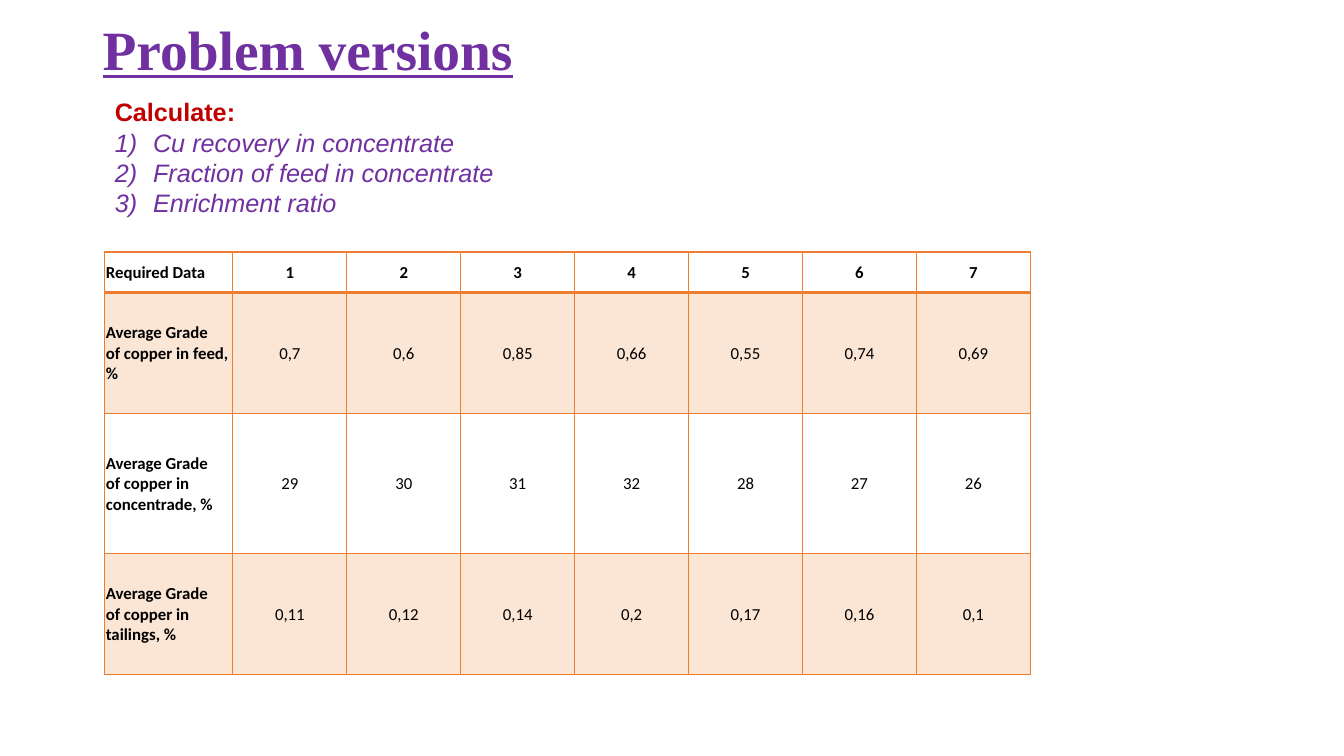
from dataclasses import dataclass
from typing import Any

from lxml.etree import SubElement
from pptx import Presentation
from pptx.dml.color import RGBColor
from pptx.enum.text import MSO_ANCHOR as Anchor, PP_ALIGN as Align
from pptx.oxml.ns import qn
from pptx.util import Inches, Pt

COLORS = {
    "purple": "7030A0",
    "red": "C00000",
    "orange": "ED7D31",
    "black": "000000",
    "white": "FFFFFF",
}


@dataclass(frozen=True)
class Style:
    font: str
    size: float
    color: str
    bold: bool = False
    italic: bool = False
    underline: bool = False


@dataclass(frozen=True)
class Measure:
    label: str
    values: tuple[str, ...]
    height: float
    shaded: bool = False


TITLE = Style("Times New Roman", 39.6, "purple", bold=True, underline=True)
PROMPT = Style("Arial", 18, "red", bold=True)
TASK = Style("Arial", 18, "purple", italic=True)
HEADING = Style("Calibri", 12, "black", bold=True)
VALUE = Style("Calibri", 12, "black")

TASKS = (
    "Cu recovery in concentrate",
    "Fraction of feed in concentrate",
    "Enrichment ratio",
)
MEASURES = (
    Measure("Required Data", tuple("1234567"), 0.4),
    Measure("Average Grade\nof copper in feed, %",
            ("0,7", "0,6", "0,85", "0,66", "0,55", "0,74", "0,69"), 1.2, True),
    Measure("Average Grade\nof copper in concentrade, %",
            ("29", "30", "31", "32", "28", "27", "26"), 1.39),
    Measure("Average Grade\nof copper in tailings, %",
            ("0,11", "0,12", "0,14", "0,2", "0,17", "0,16", "0,1"), 1.2, True),
)
LABEL_WIDTH, VALUE_WIDTH = 1.27, 1.13


def rgb(name: str) -> RGBColor:
    return RGBColor.from_string(COLORS[name])


def format_text(paragraph: Any, style: Style) -> None:
    formats = {
        "name": style.font,
        "size": Pt(style.size),
        "bold": style.bold,
        "italic": style.italic,
        "underline": style.underline,
    }
    for run in paragraph.runs:
        for attribute, setting in formats.items():
            setattr(run.font, attribute, setting)
        run.font.color.rgb = rgb(style.color)


def add_text(slide: Any, at: tuple[float, ...], text: str, style: Style) -> Any:
    frame = slide.shapes.add_textbox(*map(Inches, at)).text_frame
    frame.word_wrap = True
    frame.text = text
    format_text(frame.paragraphs[0], style)
    return frame


def add_task(frame: Any, text: str) -> None:
    task = frame.add_paragraph()
    properties = task._p.get_or_add_pPr()
    properties.set("marL", str(Inches(0.38)))
    properties.set("indent", str(-Inches(0.38)))
    SubElement(properties, qn("a:buFont"), typeface="+mj-lt")
    SubElement(properties, qn("a:buAutoNum"), type="arabicParenR")
    task.add_run().text = text
    format_text(task, TASK)


def add_borders(cell: Any, bottom_width: float, top_width: float) -> None:
    properties = cell._tc.get_or_add_tcPr()
    widths = {"lnL": 1, "lnR": 1, "lnT": top_width, "lnB": bottom_width}
    for position, (side, width) in enumerate(widths.items()):
        line = SubElement(properties, qn(f"a:{side}"), w=str(Pt(width)))
        SubElement(SubElement(line, qn("a:solidFill")), qn("a:srgbClr"),
                   val=COLORS["orange"])
        properties.insert(position, line)


def fill_cell(cell: Any, shaded: bool) -> None:
    cell.fill.solid()
    cell.fill.fore_color.rgb = rgb("orange" if shaded else "white")
    if shaded:
        tint = cell._tc.tcPr.find(qn("a:solidFill")).find(qn("a:srgbClr"))
        SubElement(tint, qn("a:alpha"), val="20000")


def add_measures(slide: Any) -> None:
    value_count = len(MEASURES[0].values)
    width = LABEL_WIDTH + value_count * VALUE_WIDTH
    height = sum(measure.height for measure in MEASURES)
    grid = slide.shapes.add_table(
        len(MEASURES), value_count + 1,
        Inches(1.04), Inches(2.5), Inches(width), Inches(height)).table
    grid.first_row = grid.horz_banding = False
    for index, column in enumerate(grid.columns):
        column.width = Inches(VALUE_WIDTH if index else LABEL_WIDTH)

    cell_format = {
        "vertical_anchor": Anchor.MIDDLE,
        "margin_left": Inches(0.01),
        "margin_right": Inches(0.01),
        "margin_top": Inches(0.01),
        "margin_bottom": 0,
    }
    for row, measure in enumerate(MEASURES):
        grid.rows[row].height = Inches(measure.height)
        for column, text in enumerate((measure.label, *measure.values)):
            cell = grid.cell(row, column)
            cell.text = text
            for attribute, setting in cell_format.items():
                setattr(cell, attribute, setting)
            for paragraph in cell.text_frame.paragraphs:
                paragraph.alignment = Align.CENTER if column else Align.LEFT
                format_text(paragraph, VALUE if row and column else HEADING)
            fill_cell(cell, measure.shaded)
            add_borders(cell, bottom_width=1 if row else 2,
                        top_width=2 if row == 1 else 1)


def main() -> None:
    deck = Presentation()
    deck.slide_width, deck.slide_height = Inches(13.33), Inches(7.5)
    slide = deck.slides.add_slide(deck.slide_layouts[6])

    # Heading
    title = add_text(slide, (0.92, 0.15, 11.5, 0.66), "Problem versions", TITLE)
    title.vertical_anchor = Anchor.MIDDLE

    # Data for each problem version
    add_measures(slide)

    # Tasks
    tasks = add_text(slide, (1.04, 0.91, 6.86, 1.31), "Calculate:", PROMPT)
    for task in TASKS:
        add_task(tasks, task)

    deck.save("out.pptx")


if __name__ == "__main__":
    main()
